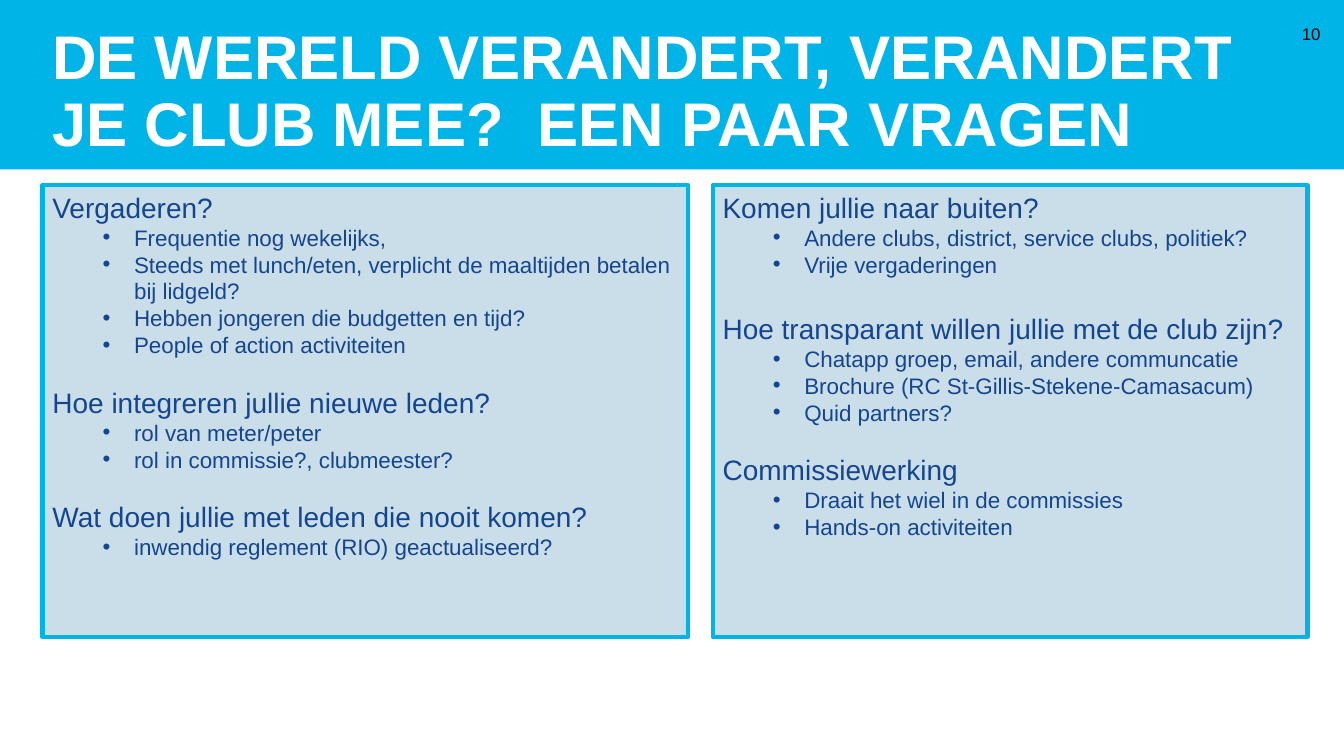
from dataclasses import dataclass

from lxml.etree import SubElement
from pptx import Presentation
from pptx.dml.color import RGBColor
from pptx.enum.shapes import MSO_SHAPE
from pptx.enum.text import MSO_ANCHOR, PP_ALIGN
from pptx.oxml.ns import qn
from pptx.util import Cm, Pt


@dataclass(frozen=True)
class Theme:
    face: str = "Arial"
    cyan: str = "01B4E7"
    pale: str = "C9DEE9"
    navy: str = "15458F"
    white: str = "FFFFFF"
    black: str = "000000"
    title: int = 44
    head: int = 20
    item: int = 16
    small: int = 12
    border: int = 3


class Maker:
    def __init__(self, slide, theme):
        self.slide = slide
        self.theme = theme

    def style(self, para, size, color, bold=False):
        font = para.font
        for font in [para.font] + [run.font for run in para.runs]:
            font.name = self.theme.face
            font.size = Pt(size)
            font.bold = bold
            font.color.rgb = RGBColor.from_string(color)

    def rect(self, area, fill, line=None):
        shape = self.slide.shapes.add_shape(MSO_SHAPE.RECTANGLE, *map(Cm, area))
        shape.shadow.inherit = False
        shape.fill.solid()
        shape.fill.fore_color.rgb = RGBColor.from_string(fill)
        if line:
            shape.line.color.rgb = RGBColor.from_string(line)
            shape.line.width = Pt(self.theme.border)
            SubElement(shape._element.spPr.find(qn("a:ln")), qn("a:round"))
        else:
            shape.line.fill.background()
        return shape

    def label(self, area, text, size, color, anchor, align=PP_ALIGN.LEFT, bold=False):
        frame = self.slide.shapes.add_textbox(*map(Cm, area)).text_frame
        frame.word_wrap = True
        frame.vertical_anchor = anchor
        frame.text = text
        para = frame.paragraphs[0]
        para.alignment = align
        self.style(para, size, color, bold)
        return frame

    def bullet(self, para):
        para.level = 1
        props = para._p.get_or_add_pPr()
        props.set("marL", str(Cm(2.06)))
        props.set("indent", str(Cm(-0.79)))
        SubElement(props, qn("a:buFont"), typeface=self.theme.face)
        SubElement(props, qn("a:buChar"), char="•")

    def panel(self, area, topics):
        theme = self.theme
        frame = self.rect(area, theme.pale, theme.cyan).text_frame
        frame.word_wrap = True
        frame.vertical_anchor = MSO_ANCHOR.TOP
        for index, (gap, head, items) in enumerate(topics):
            para = frame.add_paragraph() if index else frame.paragraphs[0]
            para.text = head
            para.alignment = PP_ALIGN.LEFT
            if gap:
                para.space_before = Pt(gap)
            self.style(para, theme.head, theme.navy)
            for item in items:
                para = frame.add_paragraph()
                para.text = item
                para.alignment = PP_ALIGN.LEFT
                self.bullet(para)
                self.style(para, theme.item, theme.navy)


LEFT = [
    (0, "Vergaderen?", [
        "Frequentie nog wekelijks,",
        "Steeds met lunch/eten, verplicht de maaltijden betalen bij lidgeld?",
        "Hebben jongeren die budgetten en tijd?",
        "People of action activiteiten",
    ]),
    (19.3, "Hoe integreren jullie nieuwe leden?", [
        "rol van meter/peter",
        "rol in commissie?, clubmeester?",
    ]),
    (19.3, "Wat doen jullie met leden die nooit komen?", [
        "inwendig reglement (RIO) geactualiseerd?",
    ]),
]
RIGHT = [
    (0, "Komen jullie naar buiten?", [
        "Andere clubs, district, service clubs, politiek?",
        "Vrije vergaderingen",
    ]),
    (24.1, "Hoe transparant willen jullie met de club zijn?", [
        "Chatapp groep, email, andere communcatie",
        "Brochure (RC St-Gillis-Stekene-Camasacum)",
        "Quid partners?",
    ]),
    (19.3, "Commissiewerking", [
        "Draait het wiel in de commissies",
        "Hands-on activiteiten",
    ]),
]


def main():
    theme = Theme()
    deck = Presentation()
    deck.slide_width = Cm(33.87)
    deck.slide_height = Cm(19.05)
    maker = Maker(deck.slides.add_slide(deck.slide_layouts[6]), theme)

    maker.rect((0, 0, 33.87, 4.27), theme.cyan)
    title = maker.label(
        (1.07, 0, 31.95, 4.27),
        "DE WERELD VERANDERT, VERANDERT JE CLUB MEE?  EEN PAAR VRAGEN",
        theme.title, theme.white, MSO_ANCHOR.BOTTOM, bold=True,
    )
    title.margin_top = 0
    title.margin_bottom = Cm(0.25)
    title.paragraphs[0].line_spacing = 0.9
    maker.label((32.36, 0.33, 1.17, 1.02), "10", theme.small, theme.black,
                MSO_ANCHOR.MIDDLE, PP_ALIGN.RIGHT)

    maker.panel((1.07, 4.67, 16.28, 11.38), LEFT)
    maker.panel((17.96, 4.67, 14.99, 11.38), RIGHT)
    deck.save("out.pptx")


if __name__ == "__main__":
    main()
